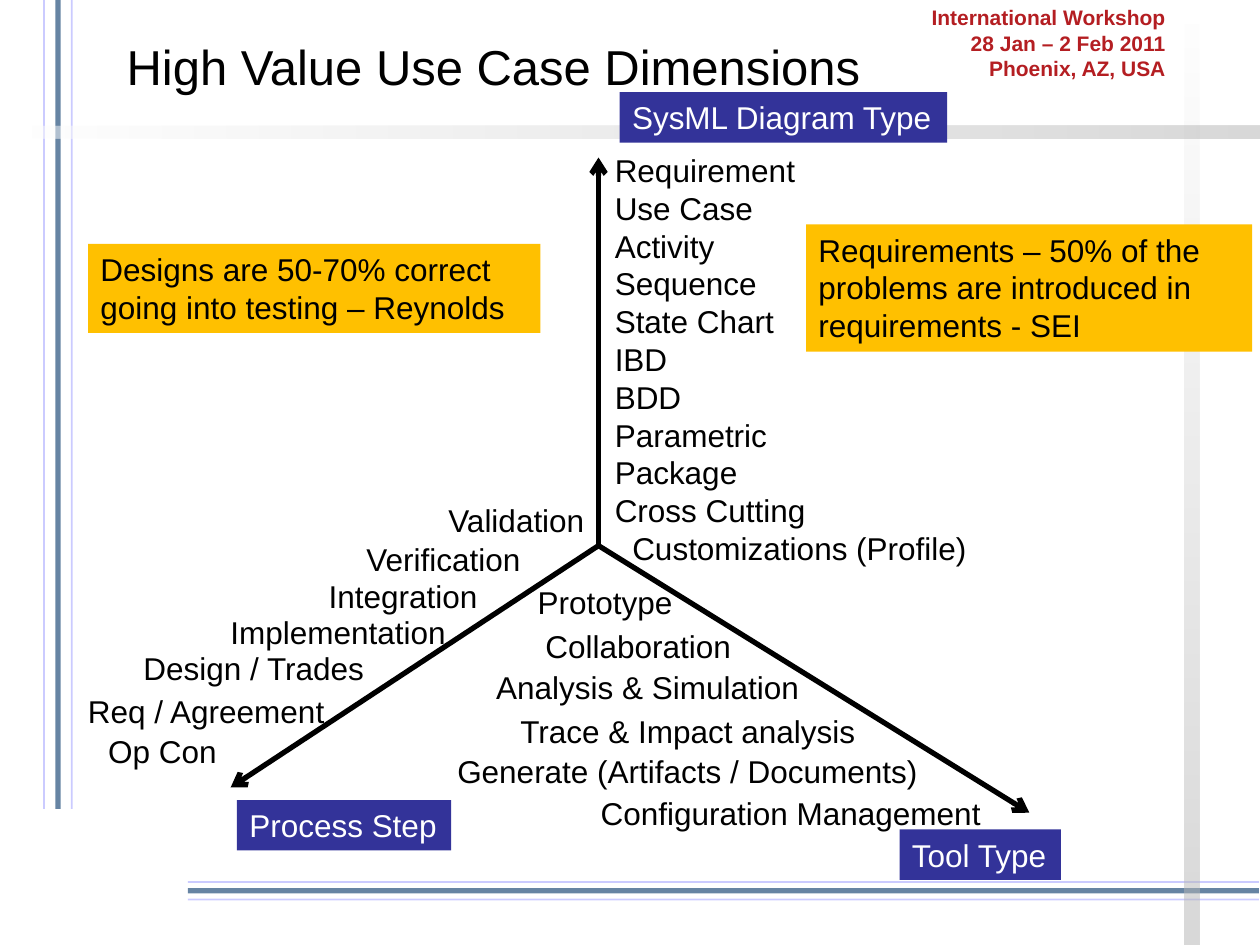
from typing import NamedTuple

from lxml import etree
from pptx import Presentation
from pptx.dml import color as dml
from pptx.enum import shapes, text
from pptx.oxml import ns
from pptx.util import Pt

BLACK, WHITE, NAVY, AMBER = "000000", "FFFFFF", "333399", "FFC000"
RULE_PALE, RULE_DARK, BAR_GREY, EVENT_RED = "9999FF", "003366", "B2B2B2", "B41E22"
LEFT, RIGHT, CENTER = text.PP_ALIGN.LEFT, text.PP_ALIGN.RIGHT, text.PP_ALIGN.CENTER
ORIGIN = (342, 311.8)


class Box(NamedTuple):
    left: float
    top: float
    width: float
    height: float


class Label(NamedTuple):
    wording: str
    left: float
    top: float
    width: float


class Callout(NamedTuple):
    wording: str
    box: Box
    fill: str
    ink: str
    wrap: bool


class Rule(NamedTuple):
    offset: float
    hue: str
    weight: float
    opacity: int


RULES = [Rule(-7.9, RULE_PALE, 1, 50), Rule(7.9, RULE_PALE, 1, 50), Rule(0, RULE_DARK, 3, 60)]
BARS = [(Box(411.1, 265.7, 540, 8.6), 90), (Box(0, 72, 720.7, 7.2), 0)]
AXIS_ENDS = [(342, 90), (588.2, 464.4), (131.8, 450)]
DIAGRAM_TYPES = ["Requirement", "Use Case", "Activity", "Sequence", "State Chart", "IBD",
                 "BDD", "Parametric", "Package", "Cross Cutting", "Customizations (Profile)"]
PROCESS_STEPS = [
    Label("Validation", 249.1, 283, 92.9),
    Label("Verification", 202.3, 305.3, 103.7),
    Label("Integration", 180.7, 326.2, 100.1),
    Label("Implementation", 124.6, 347, 139),
    Label("Design / Trades", 74.9, 367.2, 146.9),
    Label("Req / Agreement", 43.2, 391.7, 151.2),
    Label("Op Con", 54.7, 414.7, 77),
]
TOOL_TYPES = [
    Label("Prototype", 300.2, 329.8, 92.2),
    Label("Collaboration", 304.6, 355, 121.7),
    Label("Analysis & Simulation", 276.5, 378, 189.4),
    Label("Trace & Impact analysis", 290.2, 403.2, 208.1),
    Label("Generate (Artifacts / Documents)", 254.2, 426.2, 280.1),
    Label("Configuration Management", 336.2, 450, 233.3),
]
CALLOUTS = [
    Callout("SysML Diagram Type", Box(354.1, 52.7, 187.2, 28.8), NAVY, WHITE, False),
    Callout("Process Step", Box(135.4, 457.2, 122.4, 28.8), NAVY, WHITE, False),
    Callout("Tool Type", Box(514, 474, 92.2, 28.8), NAVY, WHITE, False),
    Callout("Requirements – 50% of the problems are introduced in requirements - SEI",
            Box(460.6, 128.2, 254.9, 72.7), AMBER, BLACK, True),
    Callout("Designs are 50-70% correct going into testing – Reynolds",
            Box(50.3, 139.3, 258.5, 51), AMBER, BLACK, True),
]


def paint(target, hue: str) -> None:
    target.rgb = dml.RGBColor.from_string(hue)


def fade(shape, opacity: int) -> None:
    for hue in shape._element.iter(ns.qn("a:srgbClr")):
        etree.SubElement(hue, ns.qn("a:alpha"), val=str(opacity * 1000))


def points(values) -> list:
    return [Pt(value) for value in values]


def draw_line(slide, start: tuple, end: tuple, hue: str, weight: float):
    line = slide.shapes.add_connector(shapes.MSO_CONNECTOR.STRAIGHT, *points(start + end))
    line.line.width = Pt(weight)
    paint(line.line.color, hue)
    etree.SubElement(line._element.spPr, ns.qn("a:effectLst"))
    return line


def draw_rule(slide, rule: Rule) -> None:
    x, y = 33.1 + rule.offset * 1.0, 509 + rule.offset * 0.64
    for start, end in [((x, 0), (x, 462.2)), ((719.3, y), (107.3, y))]:
        fade(draw_line(slide, start, end, rule.hue, rule.weight), rule.opacity)


def draw_bar(slide, box: Box, rotation: int) -> None:
    bar = slide.shapes.add_shape(shapes.MSO_SHAPE.RECTANGLE, *points(box))
    bar.shadow.inherit = False
    bar.rotation = rotation
    bar.line.fill.background()
    bar.fill.gradient()
    bar.fill.gradient_angle = 0
    for stop, hue in zip(bar.fill.gradient_stops, (WHITE, BAR_GREY)):
        paint(stop.color, hue)
    fade(bar, 50)


def draw_axis(slide, end: tuple) -> None:
    axis = draw_line(slide, ORIGIN, end, BLACK, 3)
    etree.SubElement(axis.line._get_or_add_ln(), ns.qn("a:tailEnd"), type="arrow")


def write(shape, lines: list, size: float = 18, ink: str = BLACK, align=LEFT,
          wrap: bool = False, bold: bool = False,
          anchor=text.MSO_ANCHOR.TOP, fit=text.MSO_AUTO_SIZE.SHAPE_TO_FIT_TEXT) -> None:
    frame = shape.text_frame
    frame.text = "\n".join(lines)
    for name, value in {"word_wrap": wrap, "auto_size": fit, "vertical_anchor": anchor}.items():
        setattr(frame, name, value)
    for paragraph in frame.paragraphs:
        paragraph.alignment = align
        for run in paragraph.runs:
            for name, value in {"size": Pt(size), "name": "Arial", "bold": bold}.items():
                setattr(run.font, name, value)
            paint(run.font.color, ink)


def draw_text(slide, box: Box, lines: list, **style):
    area = slide.shapes.add_textbox(*points(box))
    write(area, lines, **style)
    return area


def draw_callout(slide, callout: Callout) -> None:
    panel = slide.shapes.add_shape(shapes.MSO_SHAPE.RECTANGLE, *points(callout.box))
    panel.shadow.inherit = False
    panel.line.fill.background()
    panel.fill.solid()
    paint(panel.fill.fore_color, callout.fill)
    write(panel, [callout.wording], ink=callout.ink, wrap=callout.wrap)


def main() -> None:
    deck = Presentation()
    deck.slide_width, deck.slide_height = Pt(720), Pt(540)
    slide = deck.slides.add_slide(deck.slide_layouts[5])

    for rule in RULES:
        draw_rule(slide, rule)
    for box, rotation in BARS:
        draw_bar(slide, box, rotation)
    draw_text(slide, Box(523.4, -0.7, 149.8, 51.1),
              ["International Workshop", "28 Jan – 2 Feb 2011", "Phoenix, AZ, USA"],
              size=12, ink=EVENT_RED, align=RIGHT, bold=True)

    title = slide.shapes.title
    for name, value in zip(Box._fields, points((36, 0, 491.8, 74.9))):
        setattr(title, name, value)
    write(title, ["High Value Use Case Dimensions"], size=28, align=CENTER, wrap=True,
          anchor=text.MSO_ANCHOR.MIDDLE, fit=text.MSO_AUTO_SIZE.NONE)

    for end in AXIS_ENDS:
        draw_axis(slide, end)
    diagram_list = draw_text(slide, Box(344.2, 82.8, 217.4, 247), DIAGRAM_TYPES)
    diagram_list.text_frame.paragraphs[-1]._p.get_or_add_pPr().set("marL", str(Pt(10)))
    for label in PROCESS_STEPS + TOOL_TYPES:
        draw_text(slide, Box(label.left, label.top, label.width, 28.8), [label.wording])
    for callout in CALLOUTS:
        draw_callout(slide, callout)

    deck.save("out.pptx")


if __name__ == "__main__":
    main()
